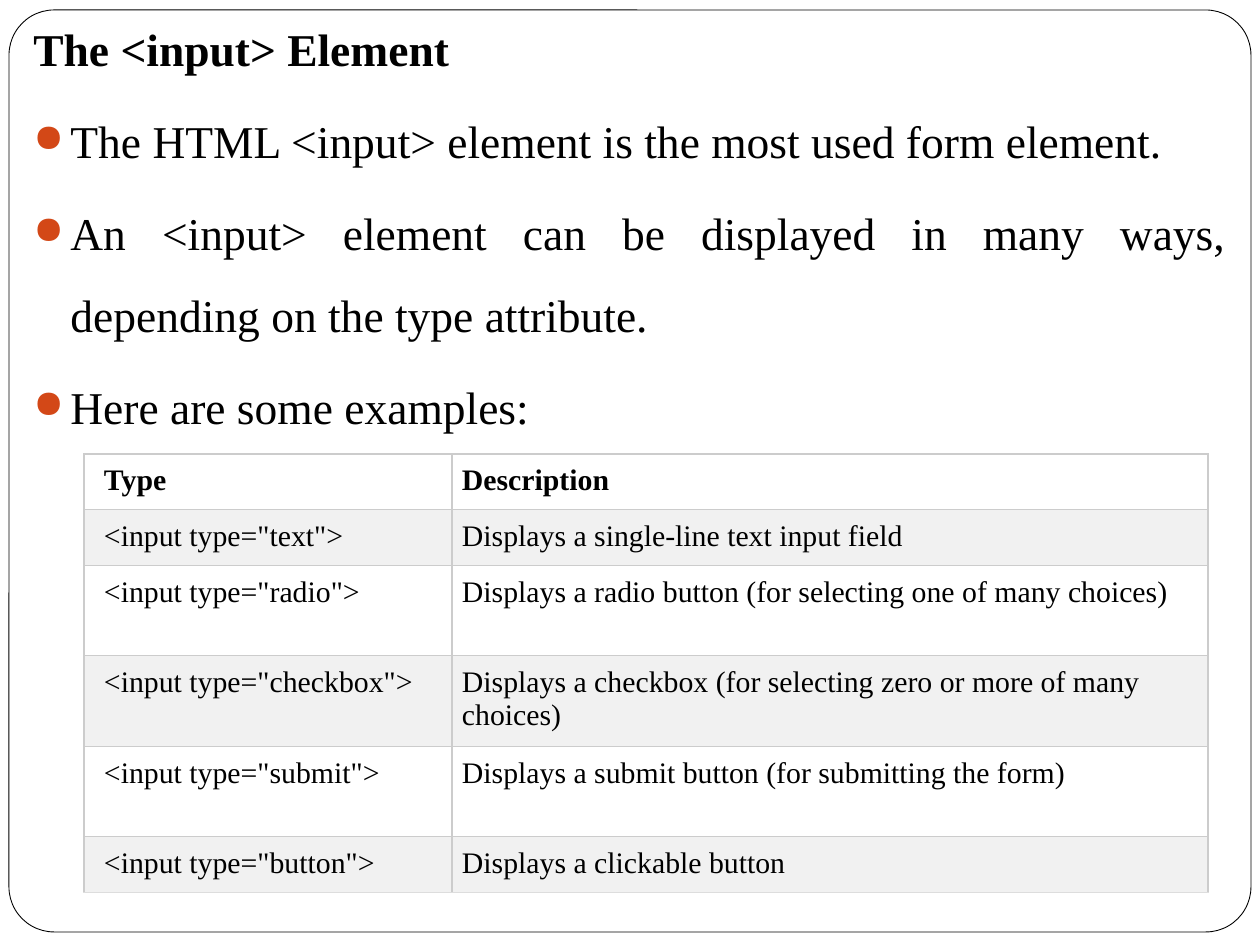
from lxml import etree
from pptx import Presentation
from pptx.dml.color import RGBColor
from pptx.enum.shapes import MSO_SHAPE
from pptx.enum.text import PP_ALIGN
from pptx.oxml.ns import qn
from pptx.util import Pt

ROUNDED = MSO_SHAPE.ROUNDED_RECTANGLE
JUSTIFY = PP_ALIGN.JUSTIFY
FONT = "Times New Roman"
COLORS = {"text": "000000", "paper": "FFFFFF", "band": "F1F1F1",
          "bullet": "D34817", "grid": "CCCCCC", "grid_end": "DDDDDD"}
EMU_PER_PX = 914400 / 126


def px(*lengths):
    """Turn pixel lengths into a list of EMU lengths."""
    return [round(length * EMU_PER_PX) for length in lengths]


def set_font(paragraph, size, bold):
    paragraph.font.name = FONT
    paragraph.font.size = Pt(size)
    paragraph.font.bold = bold
    paragraph.font.color.rgb = RGBColor.from_string(COLORS["text"])


prs = Presentation()
prs.slide_width, prs.slide_height = px(1260, 945)
slide = prs.slides.add_slide(prs.slide_layouts[6])

# Rounded page frame
frame = slide.shapes.add_shape(ROUNDED, *px(9, 10, 1242, 922))
frame.adjustments[0] = 0.049
frame.shadow.inherit = False
frame.fill.solid()
frame.fill.fore_color.rgb = RGBColor.from_string(COLORS["paper"])
frame.line.color.rgb = RGBColor.from_string(COLORS["text"])
frame.line.width = Pt(0.5)

# Heading and bullets
body = slide.shapes.add_textbox(*px(21, 21, 1218, 903)).text_frame
body.word_wrap = True
body.margin_top = 0
lines = [
    "The <input> Element",
    "The HTML <input> element is the most used form element.",
    "An <input> element can be displayed in many ways, depending on the type attribute.",
    "Here are some examples:",
]
for i, line in enumerate(lines):
    paragraph = body.add_paragraph() if i else body.paragraphs[0]
    paragraph.text = line
    paragraph.space_before = Pt(5.8)
    set_font(paragraph, 26, i == 0)
    if i == 0:
        continue
    paragraph.alignment = JUSTIFY
    paragraph.line_spacing = 1.5
    props = paragraph._p.get_or_add_pPr()
    indent = px(37)[0]
    props.set("marL", str(indent))
    props.set("indent", str(-indent))
    bullet_color = etree.SubElement(props, qn("a:buClr"))
    etree.SubElement(bullet_color, qn("a:srgbClr"), val=COLORS["bullet"])
    etree.SubElement(props, qn("a:buSzPct"), val="85000")
    etree.SubElement(props, qn("a:buChar"), char="●")

# Table of input types
rows = [
    ("Type", "Description", 55),
    ('<input type="text">', "Displays a single-line text input field", 55),
    ('<input type="radio">',
     "Displays a radio button (for selecting one of many choices)", 90),
    ('<input type="checkbox">',
     "Displays a checkbox (for selecting zero or more of many choices)", 90),
    ('<input type="submit">', "Displays a submit button (for submitting the form)", 90),
    ('<input type="button">', "Displays a clickable button", 55),
]
column_widths = px(368, 756)
table = slide.shapes.add_table(len(rows), 2, *px(84, 454, 1124, 435)).table
table.first_row = False
table.horz_banding = False
for column, width in zip(table.columns, column_widths):
    column.width = width

for r, (input_type, description, height) in enumerate(rows):
    table.rows[r].height = px(height)[0]
    for c, text in enumerate((input_type, description)):
        cell = table.cell(r, c)
        cell.text = text
        set_font(cell.text_frame.paragraphs[0], 17, r == 0)
        cell.margin_left, cell.margin_top, cell.margin_right, cell.margin_bottom = px(
            10 if c else 20, 10, 10, 10)
        cell_props = cell._tc.get_or_add_tcPr()
        for side in "LRTB":
            is_end = side == "B" and r == len(rows) - 1
            border = etree.SubElement(cell_props, qn("a:ln" + side), w=str(Pt(0.75)))
            border_fill = etree.SubElement(border, qn("a:solidFill"))
            etree.SubElement(border_fill, qn("a:srgbClr"),
                             val=COLORS["grid_end" if is_end else "grid"])
        cell.fill.solid()
        cell.fill.fore_color.rgb = RGBColor.from_string(COLORS["band" if r % 2 else "paper"])

prs.save("out.pptx")
